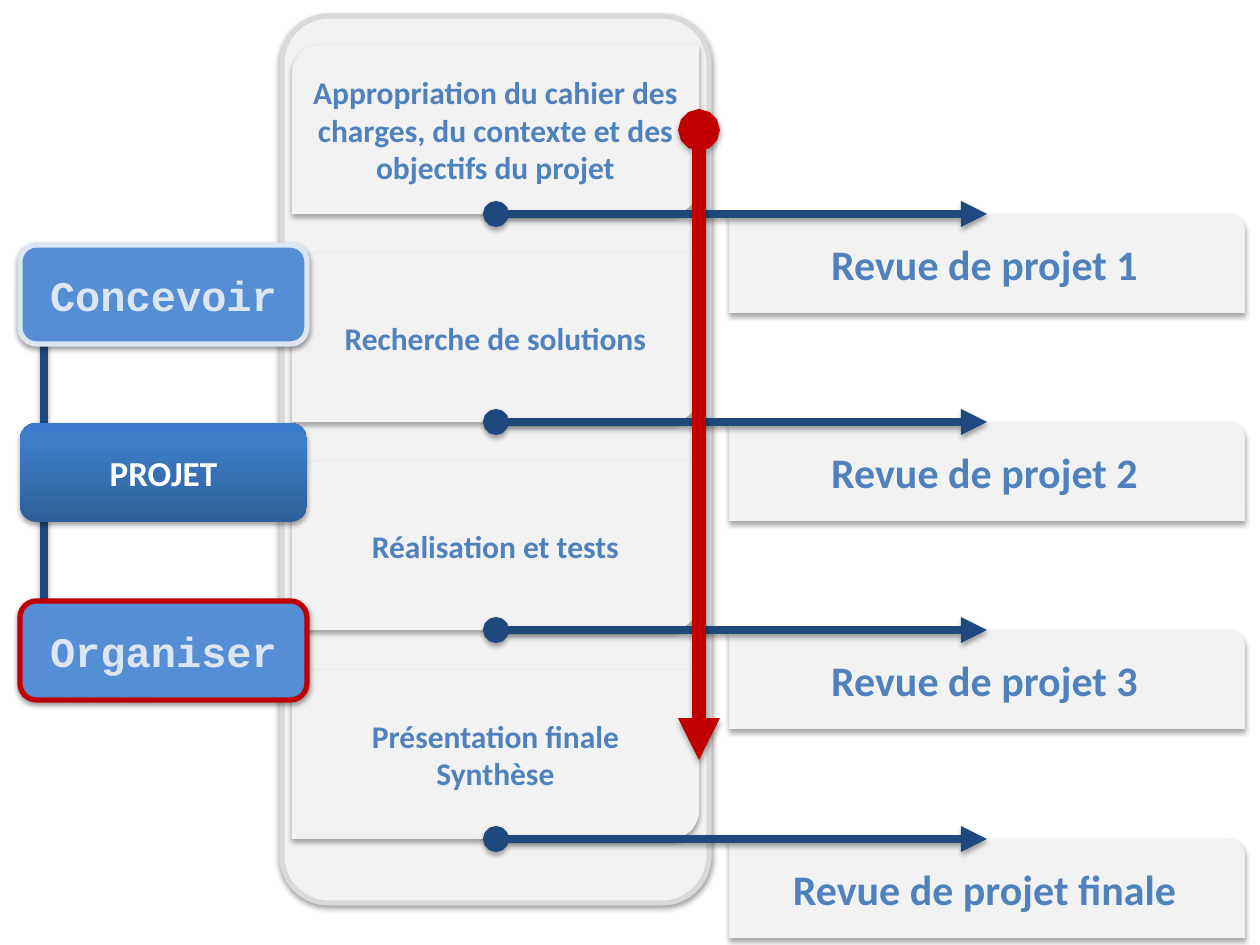
import copy

import pptx
import pptx.dml.color
import pptx.enum.shapes
import pptx.enum.text
import pptx.oxml
import pptx.oxml.ns
import pptx.util

SCALE = 914400 / 126
SHAPE = pptx.enum.shapes.MSO_SHAPE
PALE, BLUE, NAVY, RED, ICE = "F2F2F2", "4F81BD", "1F497D", "C00000", "DCE6F2"
STAGE_X, STAGE_Y, STAGE_W, STAGE_H = 292, 45, 407, 169
BUTTON_Y, BUTTON_PITCH = 245, 178
ROWS = [
    ("Appropriation du cahier des charges, du contexte et des objectifs du projet",
     "Revue de projet 1"),
    ("Recherche de solutions", "Revue de projet 2"),
    ("Réalisation et tests", "Revue de projet 3"),
    ("Présentation finale Synthèse", "Revue de projet finale"),
]


def px(n):
    return pptx.util.Emu(round(n * SCALE))


def rgb(value):
    return pptx.dml.color.RGBColor.from_string(value)


def add_shadow(s, distance=1.8, alpha=35):
    """Give a shape or connector a soft shadow below; call after its line is set."""
    emu = pptx.util.Pt
    s._element.spPr.append(pptx.oxml.parse_xml(
        f'<a:effectLst {pptx.oxml.ns.nsdecls("a")}>'
        f'<a:outerShdw blurRad="{emu(3.1)}" dist="{emu(distance)}" dir="5400000" rotWithShape="0">'
        f'<a:srgbClr val="000000"><a:alpha val="{alpha * 1000}"/></a:srgbClr>'
        '</a:outerShdw></a:effectLst>'))


def add_box(slide, kind, x, y, w, h, fill=PALE, line=None):
    sp = slide.shapes.add_shape(kind, px(x), px(y), px(w), px(h))
    sp.fill.solid()
    sp.fill.fore_color.rgb = rgb(fill)
    if line:
        sp.line.color.rgb = rgb(line)
        sp.line.width = pptx.util.Pt(3)
        add_shadow(sp, 1.6, 38)
    else:
        sp.line.fill.background()
        add_shadow(sp)
    return sp


def set_text(sp, text, size, color=BLUE, font="Calibri", wrap=True):
    tf = sp.text_frame
    tf.text = text
    tf.word_wrap = wrap
    tf.vertical_anchor = pptx.enum.text.MSO_ANCHOR.MIDDLE
    p = tf.paragraphs[0]
    p.alignment = pptx.enum.text.PP_ALIGN.CENTER
    f = p.runs[0].font
    f.name, f.size, f.bold = font, pptx.util.Pt(size), True
    f.color.rgb = rgb(color)


def set_gradient(sp, stops):
    """Fill from bottom to top with three (position, colour) stops."""
    sp.fill.gradient()
    sp.fill.gradient_angle = 90
    stop_list = sp._element.spPr.find(".//" + pptx.oxml.ns.qn("a:gsLst"))
    stop_list.insert(1, copy.deepcopy(stop_list[0]))
    for stop, (position, color) in zip(sp.fill.gradient_stops, stops):
        stop.position = position
        stop.color.rgb = rgb(color)


def add_line(slide, x1, y1, x2, y2, color=NAVY, width=5, arrow=True):
    c = slide.shapes.add_connector(
        pptx.enum.shapes.MSO_CONNECTOR.STRAIGHT, px(x1), px(y1), px(x2), px(y2))
    c.line.color.rgb = rgb(color)
    c.line.width = pptx.util.Pt(width)
    if arrow:
        for tag, kind in (("headEnd", "oval"), ("tailEnd", "triangle")):
            c.line._ln.append(pptx.oxml.parse_xml(
                f'<a:{tag} {pptx.oxml.ns.nsdecls("a")} type="{kind}"/>'))
    add_shadow(c)


def add_button(slide, row, text, size, color, font, fill="558ED5", line=None, wrap=True):
    sp = add_box(slide, SHAPE.ROUNDED_RECTANGLE, 20, BUTTON_Y + row * BUTTON_PITCH,
                 287, 99, fill, line)
    set_text(sp, text, size, color, font, wrap)
    return sp


def add_stages(slide, tops):
    panel = add_box(slide, SHAPE.ROUNDED_RECTANGLE, 282, 16, 427, 887, line="D9D9D9")
    panel.adjustments[0] = 0.11
    for top, (stage, _) in zip(tops, ROWS):
        sp = add_box(slide, SHAPE.ROUND_2_DIAG_RECTANGLE, STAGE_X, top, STAGE_W, STAGE_H)
        set_text(sp, stage, 18)


def add_buttons(slide):
    middle = BUTTON_Y + BUTTON_PITCH + 50
    for end in (middle - 139, middle + 139):
        add_line(slide, 44, middle, 44, end, arrow=False)
    project = add_button(slide, 1, "PROJET", 20, "FFFFFF", "Calibri", wrap=False)
    set_gradient(project, [(0, "2F5F99"), (0.8, "3D7CC7"), (1, "3A7CCB")])
    add_button(slide, 0, "Concevoir", 24, ICE, "Courier New", line=ICE)
    add_button(slide, 2, "Organiser", 24, ICE, "Courier New", line=RED)


def add_reviews(slide, tops):
    for top, (_, review) in zip(tops, ROWS):
        bottom = top + STAGE_H
        sp = add_box(slide, SHAPE.ROUND_1_RECTANGLE, 729, bottom, 516, 99)
        set_text(sp, review, 24)
        add_line(slide, 496, bottom, 987, bottom)


def main():
    prs = pptx.Presentation()
    prs.slide_width, prs.slide_height = px(1260), px(945)
    slide = prs.slides.add_slide(prs.slide_layouts[6])
    tops = [STAGE_Y + row * 625 // 3 for row in range(len(ROWS))]
    add_stages(slide, tops)
    add_buttons(slide)
    add_reviews(slide, tops)
    right = STAGE_X + STAGE_W
    add_line(slide, right, 130, right, 760, RED, 8)
    prs.save("out.pptx")


if __name__ == "__main__":
    main()
